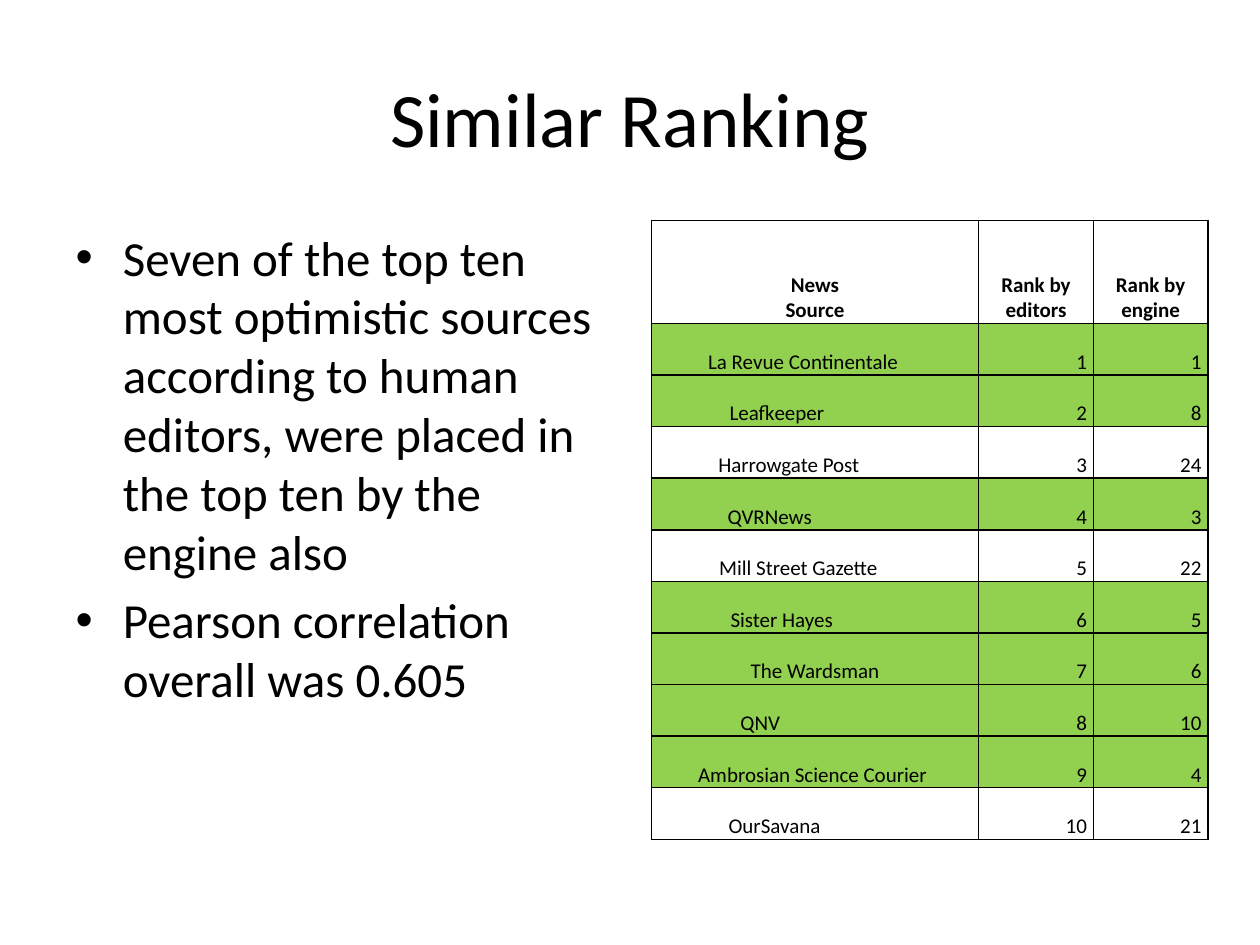
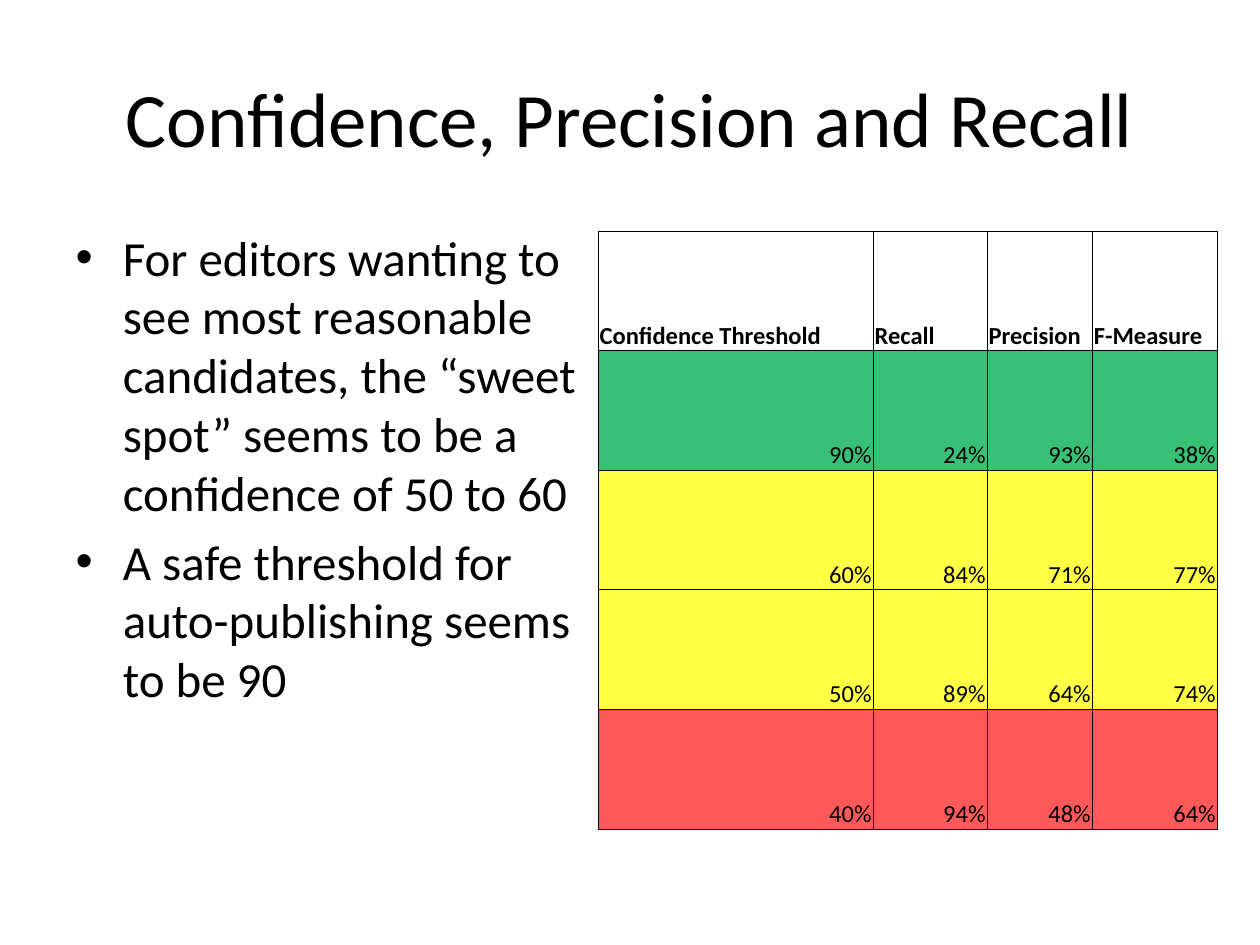
from lxml import etree
from pptx import Presentation
from pptx.dml.color import RGBColor
from pptx.enum import text as t
from pptx.oxml import ns
from pptx.util import Cm, Pt

# Shared look
FONT = "Calibri"
BLACK = RGBColor(0, 0, 0)
LIME = RGBColor(0x92, 0xD0, 0x50)
GREEN = RGBColor(0x00, 0xB0, 0x50)
YELLOW = RGBColor(0xFF, 0xFF, 0x00)
RED = RGBColor(0xFF, 0x00, 0x00)
LEFT, MID, RIGHT = t.PP_ALIGN.LEFT, t.PP_ALIGN.CENTER, t.PP_ALIGN.RIGHT

TITLE_BOX = (1.27, 0.76, 22.86, 3.18)
LIST_BOX = (1.27, 4.45, 11.23, 12.57)

# Ranking data: source, rank by editors, rank by engine
RANKS = [
    ("La Revue Continentale", 1, 1),
    ("Leafkeeper", 2, 8),
    ("Harrowgate Post", 3, 24),
    ("QVRNews", 4, 3),
    ("Mill Street Gazette", 5, 22),
    ("Sister Hayes", 6, 5),
    ("The Wardsman", 7, 6),
    ("QNV", 8, 10),
    ("Ambrosian Science Courier", 9, 4),
    ("OurSavana", 10, 21),
]
CENTRED = "The Wardsman"  # the one source that sits in mid column
PAD_LEN, PAD_STEP = 26, 0.096  # shorter names sit further left

# Threshold data: confidence, recall, precision, F-measure in per cent
SCORES = [
    (90, 24, 93, 38),
    (60, 84, 71, 77),
    (50, 89, 64, 74),
    (40, 94, 48, 64),
]
TINTS = [(GREEN, 78), (YELLOW, 73), (YELLOW, 73), (RED, 65)]


def apply(obj, form):
    for key, val in form.items():
        setattr(obj, key, val)


def style(para, size, bold=False):
    apply(para.font, {"name": FONT, "size": Pt(size), "bold": bold})
    para.font.color.rgb = BLACK


def place(shape, box):
    apply(shape, dict(zip(("left", "top", "width", "height"), map(Cm, box))))


def add_page(deck, title, points):
    """Add a slide with its title and bullet list."""
    page = deck.slides.add_slide(deck.slide_layouts[1])
    head, body = page.placeholders
    place(head, TITLE_BOX)
    head.text_frame.text = title
    style(head.text_frame.paragraphs[0], 44)

    place(body, LIST_BOX)
    frame = body.text_frame
    frame.text = "\n".join(points)
    frame.auto_size = t.MSO_AUTO_SIZE.NONE
    for num, para in enumerate(frame.paragraphs):
        style(para, 28)
        para.space_before = Pt(5.6 if num else 0)
    return page


def add_edges(cell, width):
    props = cell._tc.get_or_add_tcPr()
    for side in ("lnL", "lnR", "lnT", "lnB"):
        line = etree.SubElement(props, ns.qn("a:" + side), w=str(Pt(width)))
        fill = etree.SubElement(line, ns.qn("a:solidFill"))
        etree.SubElement(fill, ns.qn("a:srgbClr"), val=str(BLACK))


def tint(cell, color, alpha=100):
    """Fill a cell; no colour leaves it clear."""
    if color is None:
        cell.fill.background()
        return
    cell.fill.solid()
    cell.fill.fore_color.rgb = color
    if alpha < 100:
        mark = cell._tc.tcPr.find(ns.qn("a:solidFill")).find(ns.qn("a:srgbClr"))
        etree.SubElement(mark, ns.qn("a:alpha"), val=str(alpha * 1000))


def add_grid(page, spot, widths, heights, rows, fills, aligns, head_align,
             size, edge, insets):
    """Add a table with a bold head row and one fill for each row."""
    box = (*spot, sum(widths), sum(heights))
    table = page.shapes.add_table(len(rows), len(widths), *map(Cm, box)).table
    apply(table, {"first_row": False, "horz_banding": False})
    for col, width in zip(table.columns, widths):
        col.width = Cm(width)
    for r, (row, height) in enumerate(zip(rows, heights)):
        table.rows[r].height = Cm(height)
        for c, value in enumerate(row):
            cell = table.cell(r, c)
            cell.text = str(value)
            apply(cell, {"vertical_anchor": t.MSO_ANCHOR.BOTTOM, **insets})
            para = cell.text_frame.paragraphs[0]
            para.alignment = aligns[c] if r else head_align
            style(para, size, bold=r == 0)
            add_edges(cell, edge)
            tint(cell, *fills[r])
    return table


def add_ranks(page):
    side = Cm(0.13)
    fills = [(LIME if engine <= 10 else None,) for _, _, engine in RANKS]
    table = add_grid(
        page, (13.13, 4.44), (6.6, 2.31, 2.31), [2.08] + [1.04] * len(RANKS),
        [("News\vSource", "Rank by editors", "Rank by engine"), *RANKS],
        [(None,), *fills], (MID, RIGHT, RIGHT), MID, 12, 1,
        {"margin_left": side, "margin_right": side,
         "margin_top": 0, "margin_bottom": 0})
    for r, (name, _, _) in enumerate(RANKS, 1):
        if name != CENTRED:
            pad = (PAD_LEN - len(name)) * PAD_STEP
            table.cell(r, 0).margin_right = side + Cm(pad)


def add_scores(page):
    thin = Cm(0.03)
    head = ("Confidence Threshold", "Recall", "Precision", "F-Measure")
    rows = [[f"{num}%" for num in row] for row in SCORES]
    add_grid(
        page, (12.06, 4.66), (5.54, 2.3, 2.12, 2.52), [2.41] * (len(rows) + 1),
        [head, *rows], [(None,), *TINTS], [RIGHT] * len(head), LEFT, 14, 0.5,
        {"margin_left": thin, "margin_right": thin,
         "margin_top": thin, "margin_bottom": 0})


def main():
    deck = Presentation()
    apply(deck, {"slide_width": Cm(25.4), "slide_height": Cm(19.05)})

    # Ranking by editors and by engine
    add_ranks(add_page(deck, "Similar Ranking", [
        "Seven of the top ten most optimistic sources according to human "
        "editors, were placed in the top ten by the engine also",
        "Pearson correlation overall was 0.605",
    ]))

    # Scores by confidence threshold
    add_scores(add_page(deck, "Confidence, Precision and Recall", [
        "For editors wanting to see most reasonable candidates, the “sweet "
        "spot” seems to be a confidence of 50 to 60",
        "A safe threshold for auto-publishing seems to be 90",
    ]))

    deck.save("out.pptx")


if __name__ == "__main__":
    main()
